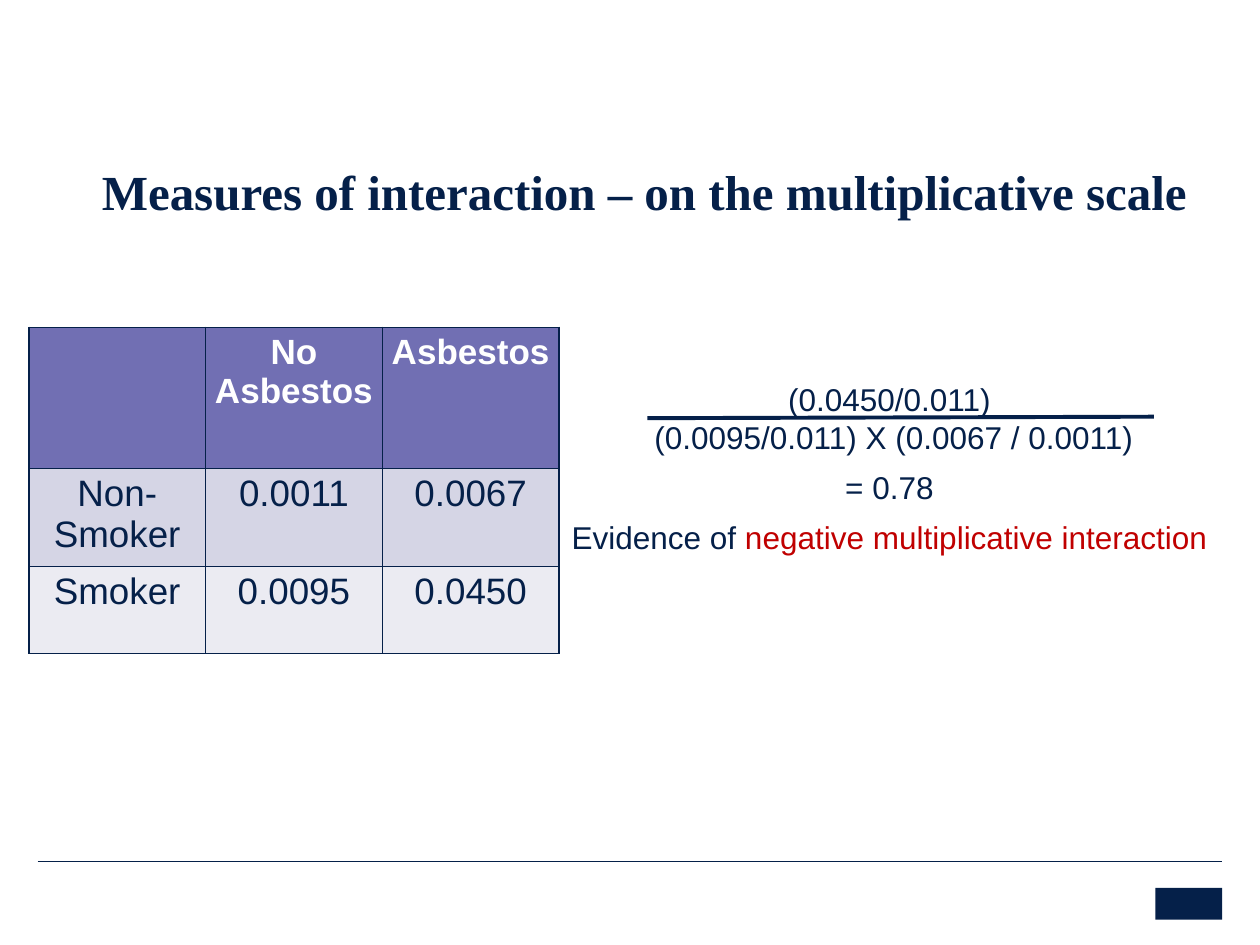
from collections import namedtuple

from lxml.etree import SubElement
from pptx import Presentation
from pptx.dml.color import RGBColor
from pptx.enum.shapes import MSO_CONNECTOR, MSO_SHAPE
from pptx.enum.text import MSO_ANCHOR, MSO_AUTO_SIZE, PP_ALIGN
from pptx.oxml.ns import qn
from pptx.util import Cm, Pt

NAVY = RGBColor(0x05, 0x20, 0x49)
RED = RGBColor(0xC0, 0x00, 0x00)
WHITE = RGBColor(0xFF, 0xFF, 0xFF)
PURPLE = RGBColor(0x71, 0x6F, 0xB3)
LILAC = RGBColor(0xD5, 0xD5, 0xE5)
PALE = RGBColor(0xEB, 0xEB, 0xF2)

Box = namedtuple("Box", "left top width height")

RISKS = [
    ["", "No Asbestos", "Asbestos"],
    ["Non-Smoker", "0.0011", "0.0067"],
    ["Smoker", "0.0095", "0.0450"],
]
ROW_HEIGHTS = [Cm(2.84), Cm(1.98), Cm(1.75)]
ROW_FILLS = [PURPLE, LILAC, PALE]

CALCULATION = [
    [("(0.0450/0.011)\v (0.0095/0.011) X (0.0067 / 0.0011)", NAVY)],
    [("= 0.78", NAVY)],
    [("Evidence of ", NAVY), ("negative multiplicative interaction", RED)],
]


def apply(target, values):
    for name, value in values.items():
        setattr(target, name, value)


def add_span(para, text, size, color, font="Arial", bold=False):
    span = para.add_run()
    span.text = text
    apply(span.font, {"name": font, "size": Pt(size), "bold": bold})
    span.font.color.rgb = color


def add_rule(page, start, end, weight):
    rule = page.shapes.add_connector(MSO_CONNECTOR.STRAIGHT, *start, *end)
    rule.line.color.rgb = NAVY
    rule.line.width = Pt(weight)
    SubElement(rule._element.spPr, qn("a:effectLst"))


def add_footer(page, box):
    add_rule(page, (box.left, box.top), (box.left + box.width, box.top), 0.25)
    width, height = Cm(1.35), Cm(0.64)
    mark = page.shapes.add_shape(
        MSO_SHAPE.RECTANGLE,
        box.left + box.width - width,
        box.top + box.height - height,
        width,
        height,
    )
    mark.shadow.inherit = False
    mark.fill.solid()
    mark.fill.fore_color.rgb = NAVY
    mark.line.fill.background()


def fill_title(page, box):
    title = page.shapes.title
    apply(title, box._asdict())
    apply(title.text_frame, {
        "auto_size": MSO_AUTO_SIZE.NONE,
        "word_wrap": True,
        "vertical_anchor": MSO_ANCHOR.MIDDLE,
        "margin_right": 0,
    })
    para = title.text_frame.paragraphs[0]
    apply(para, {"alignment": PP_ALIGN.LEFT, "line_spacing": 0.85})
    add_span(para, "Measures of interaction – on the multiplicative scale",
             28, NAVY, "Times New Roman", True)


def fill_calculation(page, box):
    body = page.placeholders[1]
    apply(body, box._asdict())
    frame = body.text_frame
    apply(frame, {
        "auto_size": MSO_AUTO_SIZE.NONE,
        "word_wrap": True,
        "vertical_anchor": MSO_ANCHOR.TOP,
        "margin_top": Cm(1.07),
    })
    for index, parts in enumerate(CALCULATION):
        para = frame.add_paragraph() if index else frame.paragraphs[0]
        apply(para, {
            "alignment": PP_ALIGN.CENTER,
            "space_before": Pt(1),
            "space_after": Pt(6),
        })
        properties = para._p.get_or_add_pPr()
        properties.set("marL", "0")
        properties.set("indent", "0")
        SubElement(properties, qn("a:buNone"))
        for text, color in parts:
            lines = text.split("\v")
            for number, line in enumerate(lines):
                if number:
                    para.add_line_break()
                add_span(para, line, 18, color)
    add_rule(page,
             (box.left + Cm(2.59), box.top + Cm(1.83)),
             (box.left + Cm(12.8), box.top + Cm(1.8)), 2.25)


def add_borders(cell):
    properties = cell._tc.get_or_add_tcPr()
    for side in ("lnL", "lnR", "lnT", "lnB"):
        border = SubElement(properties, qn(f"a:{side}"), w=str(Pt(1)))
        fill = SubElement(border, qn("a:solidFill"))
        SubElement(fill, qn("a:srgbClr"), val=str(NAVY))


def add_risk_table(page, box):
    table = page.shapes.add_table(len(RISKS), len(RISKS[0]), *box).table
    for column in table.columns:
        column.width = box.width // len(RISKS[0])
    for index, texts in enumerate(RISKS):
        table.rows[index].height = ROW_HEIGHTS[index]
        header = index == 0
        for cell, text in zip(table.rows[index].cells, texts):
            add_borders(cell)
            cell.fill.solid()
            cell.fill.fore_color.rgb = ROW_FILLS[index]
            apply(cell, {
                "margin_left": Cm(0.17),
                "margin_right": Cm(0.17),
                "margin_top": Cm(0.1),
                "margin_bottom": Cm(0.1),
                "vertical_anchor": MSO_ANCHOR.TOP,
            })
            para = cell.text_frame.paragraphs[0]
            para.alignment = PP_ALIGN.CENTER
            if text:
                add_span(para, text, 20 if header else 21,
                         WHITE if header else NAVY, bold=header)


def main():
    deck = Presentation()
    apply(deck, {"slide_width": Cm(25.4), "slide_height": Cm(19.05)})
    page = deck.slides.add_slide(deck.slide_layouts[1])
    add_footer(page, Box(Cm(0.76), Cm(17.37), Cm(23.88), Cm(1.17)))
    fill_title(page, Box(Cm(1.8), Cm(3.3), Cm(22.48), Cm(1.3)))
    fill_calculation(page, Box(Cm(10.46), Cm(6.6), Cm(14.94), Cm(8.36)))
    add_risk_table(page, Box(Cm(0.58), Cm(6.6), Cm(10.69), sum(ROW_HEIGHTS)))
    deck.save("out.pptx")


if __name__ == "__main__":
    main()
